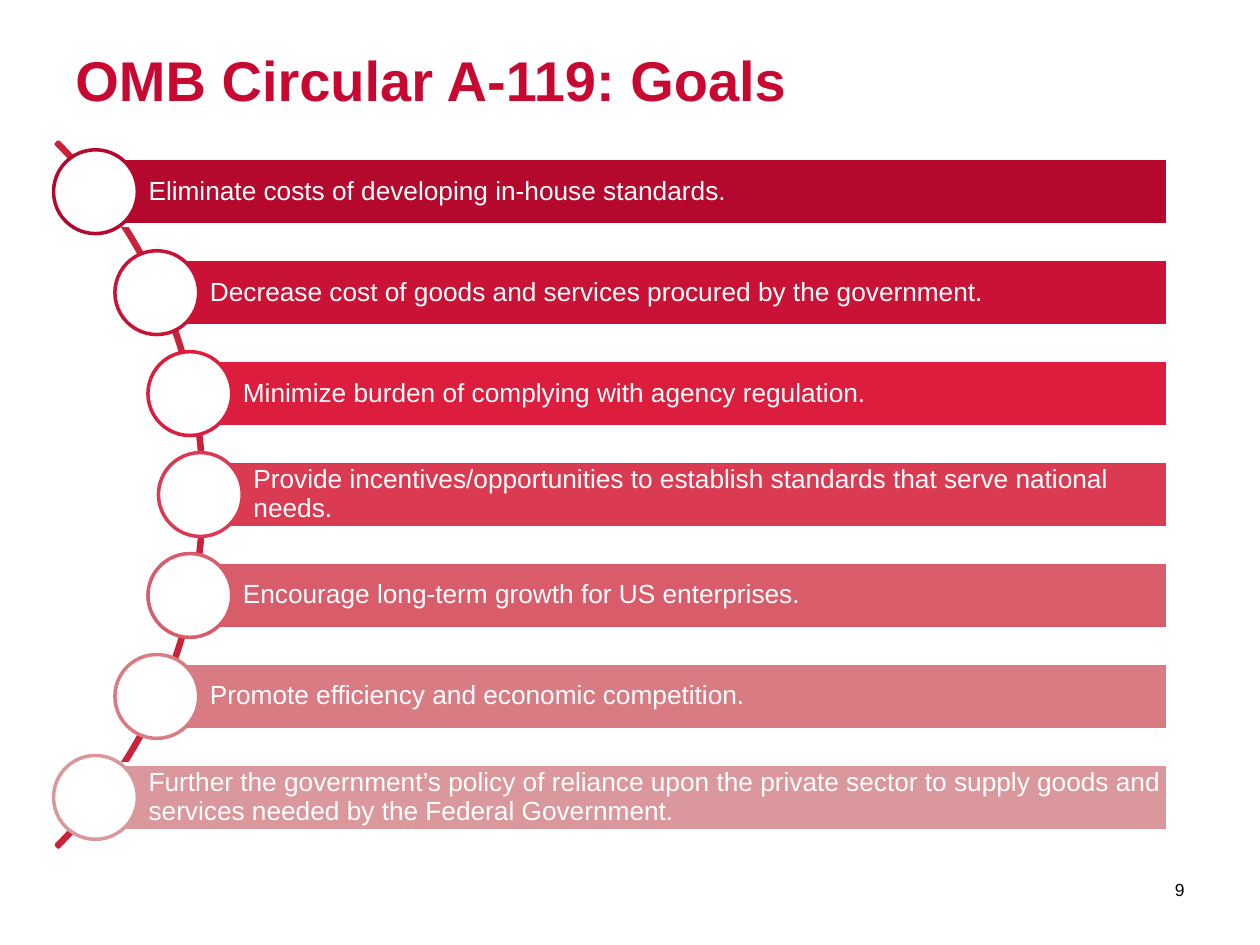
from math import sqrt

from pptx import Presentation
from pptx.dml.color import RGBColor
from pptx.enum import shapes, text
from pptx.util import Cm, Pt

# Content
TITLE = "OMB Circular A-119: Goals"
PAGE_NUMBER = "9"
GOALS = [
    ("Eliminate costs of developing in-house standards.", RGBColor(0xB5, 0x08, 0x2D)),
    ("Decrease cost of goods and services procured by the government.", RGBColor(0xC9, 0x12, 0x35)),
    ("Minimize burden of complying with agency regulation.", RGBColor(0xDC, 0x1D, 0x3D)),
    ("Provide incentives/opportunities to establish standards that serve national needs.",
     RGBColor(0xDB, 0x3B, 0x52)),
    ("Encourage long-term growth for US enterprises.", RGBColor(0xD9, 0x5C, 0x6B)),
    ("Promote efficiency and economic competition.", RGBColor(0xD8, 0x7B, 0x83)),
    ("Further the government’s policy of reliance upon the private sector to supply goods and "
     "services needed by the Federal Government.", RGBColor(0xDA, 0x97, 0x9C)),
]
FONT = "Arial"
WHITE = RGBColor(0xFF, 0xFF, 0xFF)
BLACK = RGBColor(0, 0, 0)
TITLE_RED = RGBColor(0xC7, 0x09, 0x32)
ARC_RED = RGBColor(0xC8, 0x23, 0x3A)

# Layout in centimetres
CENTRE_Y = 9.97
ARC_CENTRE_X, ARC_RADIUS = -5.93, 10.05
NODE_CENTRE_X, NODE_RADIUS = -5.83, 9.87
ROW_PITCH = 2.035
BAR_HEIGHT, BAR_RIGHT = 1.35, 23.54
DOT_SIZE = 1.69


def add_shape(slide, kind, left, top, width, height, fill, line):
    shape = slide.shapes.add_shape(kind, Cm(left), Cm(top), Cm(width), Cm(height))
    shape.shadow.inherit = False
    shape.fill.solid()
    shape.fill.fore_color.rgb = fill
    shape.line.color.rgb = line
    shape.line.width = Pt(2)
    return shape


def write(shape, words, size, color, anchor, align=text.PP_ALIGN.LEFT, bold=False):
    frame = shape.text_frame
    frame.text = words
    frame.word_wrap = True
    frame.vertical_anchor = anchor
    paragraph = frame.paragraphs[0]
    paragraph.alignment = align
    font = paragraph.runs[0].font
    font.name, font.size, font.bold = FONT, Pt(size), bold
    font.color.rgb = color
    return paragraph


def add_goal(slide, row, words, color):
    offset = (row - (len(GOALS) - 1) / 2) * ROW_PITCH
    x = NODE_CENTRE_X + sqrt(NODE_RADIUS ** 2 - offset ** 2)
    y = CENTRE_Y + offset
    bar = add_shape(slide, shapes.MSO_SHAPE.RECTANGLE, x, y - BAR_HEIGHT / 2,
                    BAR_RIGHT - x, BAR_HEIGHT, color, WHITE)
    write(bar, words, 15, WHITE, text.MSO_ANCHOR.MIDDLE).line_spacing = 0.9
    frame = bar.text_frame
    frame.margin_left = Cm(1.07)
    frame.margin_top = frame.margin_right = frame.margin_bottom = Cm(0.1)
    add_shape(slide, shapes.MSO_SHAPE.OVAL, x - DOT_SIZE / 2, y - DOT_SIZE / 2,
              DOT_SIZE, DOT_SIZE, WHITE, color)


def main():
    presentation = Presentation()
    presentation.slide_width, presentation.slide_height = Cm(25.4), Cm(19.05)
    slide = presentation.slides.add_slide(presentation.slide_layouts[6])

    # Title
    title = slide.shapes.add_textbox(Cm(1.27), Cm(0.79), Cm(22.86), Cm(3.18))
    write(title, TITLE, 32, TITLE_RED, text.MSO_ANCHOR.TOP, bold=True)

    # Arc behind the goals
    arc = add_shape(slide, shapes.MSO_SHAPE.BLOCK_ARC, ARC_CENTRE_X - ARC_RADIUS,
                    CENTRE_Y - ARC_RADIUS, 2 * ARC_RADIUS, 2 * ARC_RADIUS, ARC_RED, ARC_RED)
    for index, value in enumerate((189, 27, 0.003)):
        arc.adjustments[index] = value

    # Bars and dots along the arc
    for row, (words, color) in enumerate(GOALS):
        add_goal(slide, row, words, color)

    # Page number
    number = slide.shapes.add_textbox(Cm(22.35), Cm(17.42), Cm(1.78), Cm(1.02))
    write(number, PAGE_NUMBER, 10, BLACK, text.MSO_ANCHOR.MIDDLE, text.PP_ALIGN.RIGHT)

    presentation.save("out.pptx")


if __name__ == "__main__":
    main()
